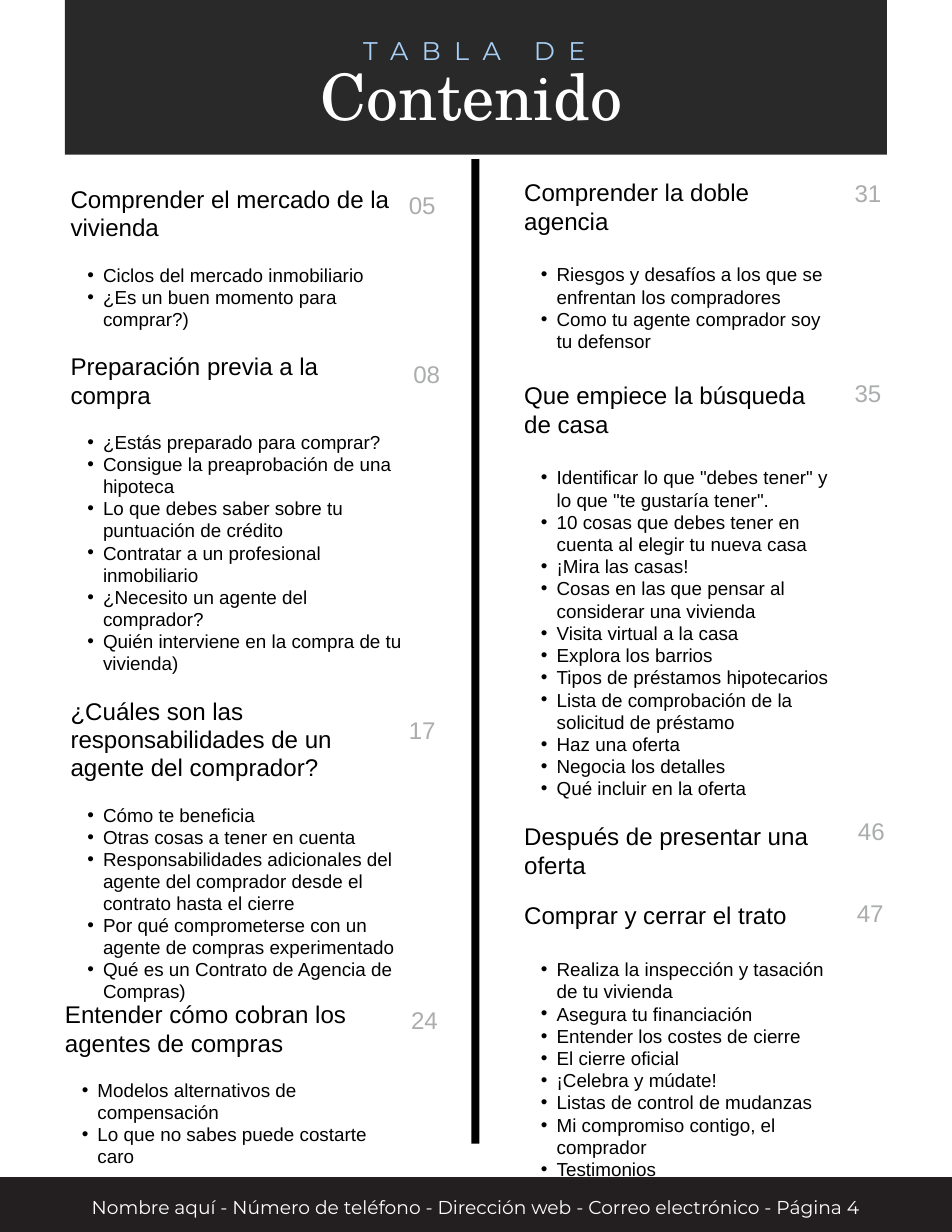
from dataclasses import dataclass
from typing import NamedTuple

from lxml.etree import SubElement
from pptx import Presentation
from pptx.dml.color import RGBColor
from pptx.enum.shapes import MSO_SHAPE as Shape
from pptx.enum.text import MSO_AUTO_SIZE as AutoSize, PP_ALIGN as Align
from pptx.oxml.ns import qn
from pptx.util import Inches, Pt

COLS, ROWS = 85, 110
CELL = Inches(0.1)
CHARCOAL = RGBColor(0x29, 0x29, 0x29)
FOOTER = RGBColor(0x23, 0x1F, 0x20)
BLACK = RGBColor(0, 0, 0)
WHITE = RGBColor(0xFF, 0xFF, 0xFF)
SKY = RGBColor(0xA8, 0xD0, 0xF6)
GREY = RGBColor(0xAA, 0xAC, 0xAD)


class Area(NamedTuple):
    col: float
    row: float
    cols: float
    rows: float


@dataclass(frozen=True)
class Style:
    font: str
    size: float
    color: RGBColor
    leading: float
    align: Align = Align.LEFT
    tracking: float = 0


@dataclass(frozen=True)
class Section:
    title: str
    topics: tuple[str, ...] = ()
    before: float = 0


@dataclass(frozen=True)
class Column:
    area: Area
    leading: float
    title_gap: float
    sections: tuple[Section, ...]


@dataclass(frozen=True)
class Label:
    text: str
    area: Area
    style: Style


HEADING = Style("Arial", 15.5, BLACK, 18.3)
NUMBER = Style("Arial", 15.5, GREY, 18.6)

BARS = (
    (Area(5.8, 0, 73.4, 13.8), CHARCOAL),
    (Area(42.1, 14.2, 0.7, 87.9), BLACK),
    (Area(-1, 105.1, 87.4, 4.9), FOOTER),
)
LABELS = (
    Label("Contenido", Area(25, 3.9, 34.2, 7.3), Style("TeX Gyre Schola", 41.1, WHITE, 57.5, Align.CENTER)),
    Label("TABLA DE", Area(29.2, 2.7, 26.3, 2.9), Style("Montserrat", 16.4, SKY, 23, Align.CENTER, 8.5)),
    Label("Nombre aquí - Número de teléfono - Dirección web - Correo electrónico - Página 4",
          Area(0, 106.4, COLS, 2.2), Style("Montserrat", 12, WHITE, 16.8, Align.CENTER)),
)
PAGES = (
    ("05", 36.5, 17), ("08", 36.9, 32.1), ("17", 36.5, 63.9), ("24", 36.7, 89.8),
    ("31", 76.3, 15.9), ("35", 76.3, 33.8), ("46", 76.6, 72.9), ("47", 76.5, 80.2),
)
COLUMNS = (
    Column(Area(6.3, 16.5, 29.8, 72.6), 14.2, 14.2, (
        Section("Comprender el mercado de la vivienda", (
            "Ciclos del mercado inmobiliario",
            "¿Es un buen momento para comprar?)",
        )),
        Section("Preparación previa a la compra", (
            "¿Estás preparado para comprar?",
            "Consigue la preaprobación de una hipoteca",
            "Lo que debes saber sobre tu puntuación de crédito",
            "Contratar a un profesional inmobiliario",
            "¿Necesito un agente del comprador?",
            "Quién interviene en la compra de tu vivienda)",
        ), 14.2),
        Section("¿Cuáles son las responsabilidades de un agente del comprador?", (
            "Cómo te beneficia",
            "Otras cosas a tener en cuenta",
            "Responsabilidades adicionales del agente del comprador desde el contrato hasta el cierre",
            "Por qué comprometerse con un agente de compras experimentado",
            "Qué es un Contrato de Agencia de Compras)",
        ), 14.2),
    )),
    Column(Area(5.8, 89.3, 27.5, 13.1), 14.2, 14.2, (
        Section("Entender cómo cobran los agentes de compras", (
            "Modelos alternativos de compensación",
            "Lo que no sabes puede costarte caro",
        )),
    )),
    Column(Area(46.8, 15.9, 27.9, 87), 14.3, 18.3, (
        Section("Comprender la doble agencia", (
            "Riesgos y desafíos a los que se enfrentan los compradores",
            "Como tu agente comprador soy tu defensor",
        )),
        Section("Que empiece la búsqueda de casa", (
            'Identificar lo que "debes tener" y lo que "te gustaría tener".',
            "10 cosas que debes tener en cuenta al elegir tu nueva casa",
            "¡Mira las casas!",
            "Cosas en las que pensar al considerar una vivienda",
            "Visita virtual a la casa",
            "Explora los barrios",
            "Tipos de préstamos hipotecarios",
            "Lista de comprobación de la solicitud de préstamo",
            "Haz una oferta",
            "Negocia los detalles",
            "Qué incluir en la oferta",
        ), 18.3),
        Section("Después de presentar una oferta", before=14.3),
        Section("Comprar y cerrar el trato", (
            "Realiza la inspección y tasación de tu vivienda",
            "Asegura tu financiación",
            "Entender los costes de cierre",
            "El cierre oficial",
            "¡Celebra y múdate!",
            "Listas de control de mudanzas",
            "Mi compromiso contigo, el comprador",
            "Testimonios",
        ), 14.3),
    )),
)


def assign(target, values: dict) -> None:
    """Set every attribute named in the dict."""
    for name, value in values.items():
        setattr(target, name, value)


def place(area: Area) -> list[int]:
    """Turn a grid area into slide lengths."""
    return [round(v * CELL) for v in area]


def add_bar(s, area: Area, color: RGBColor) -> None:
    """Draw a plain filled bar."""
    sp = s.shapes.add_shape(Shape.RECTANGLE, *place(area))
    sp.shadow.inherit = False
    sp.fill.solid()
    sp.fill.fore_color.rgb = color
    sp.line.fill.background()


def add_frame(s, area: Area):
    """Add a wrapping text box without margins."""
    tf = s.shapes.add_textbox(*place(area)).text_frame
    assign(tf, dict(margin_left=0, margin_top=0, margin_right=0, margin_bottom=0,
                    word_wrap=True, auto_size=AutoSize.SHAPE_TO_FIT_TEXT))
    return tf


def write(p, text: str, style: Style, before: float = 0) -> None:
    """Write one styled run in a paragraph."""
    assign(p, dict(alignment=style.align, line_spacing=Pt(style.leading)))
    if before:
        p.space_before = Pt(before)
    r = p.add_run()
    r.text = text
    assign(r.font, dict(name=style.font, size=Pt(style.size)))
    r.font.color.rgb = style.color
    if style.tracking:
        r.font._element.set("spc", str(round(style.tracking * 100)))


def add_bullet(p) -> None:
    """Give a paragraph a hanging round bullet."""
    p.level = 1
    pPr = p._p.get_or_add_pPr()
    pPr.set("marL", str(Inches(0.29)))
    pPr.set("indent", str(-Inches(0.14)))
    SubElement(pPr, qn("a:buFont"), typeface="Arial")
    SubElement(pPr, qn("a:buChar"), char="•")


def add_label(s, label: Label) -> None:
    """Add a single-line text."""
    write(add_frame(s, label.area).paragraphs[0], label.text, label.style)


def add_column(s, column: Column) -> None:
    """Add the headings and topics of a column."""
    tf = add_frame(s, column.area)
    topic_style = Style("Arial", 12.1, BLACK, column.leading)
    for i, section in enumerate(column.sections):
        p = tf.add_paragraph() if i else tf.paragraphs[0]
        write(p, section.title, HEADING, section.before)
        for j, topic in enumerate(section.topics):
            p = tf.add_paragraph()
            add_bullet(p)
            write(p, topic, topic_style, 0 if j else column.title_gap)


def main() -> None:
    """Build and save the contents page."""
    prs = Presentation()
    assign(prs, dict(slide_width=COLS * CELL, slide_height=ROWS * CELL))
    s = prs.slides.add_slide(prs.slide_layouts[6])
    for area, color in BARS:
        add_bar(s, area, color)
    for column in COLUMNS:
        add_column(s, column)
    for label in LABELS:
        add_label(s, label)
    for page, col, row in PAGES:
        add_label(s, Label(page, Area(col, row, 3.2, 2.6), NUMBER))
    prs.save("out.pptx")


if __name__ == "__main__":
    main()
